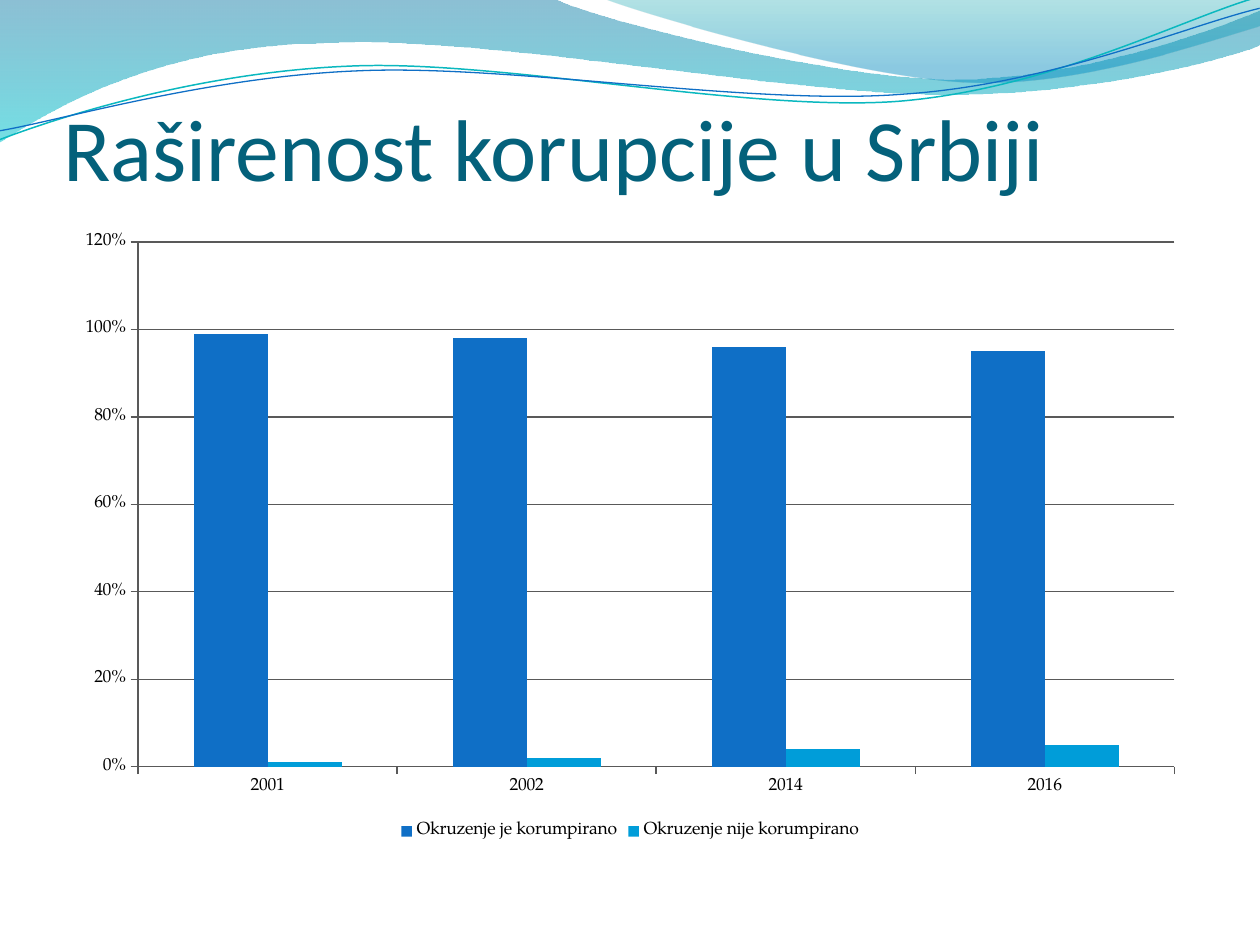
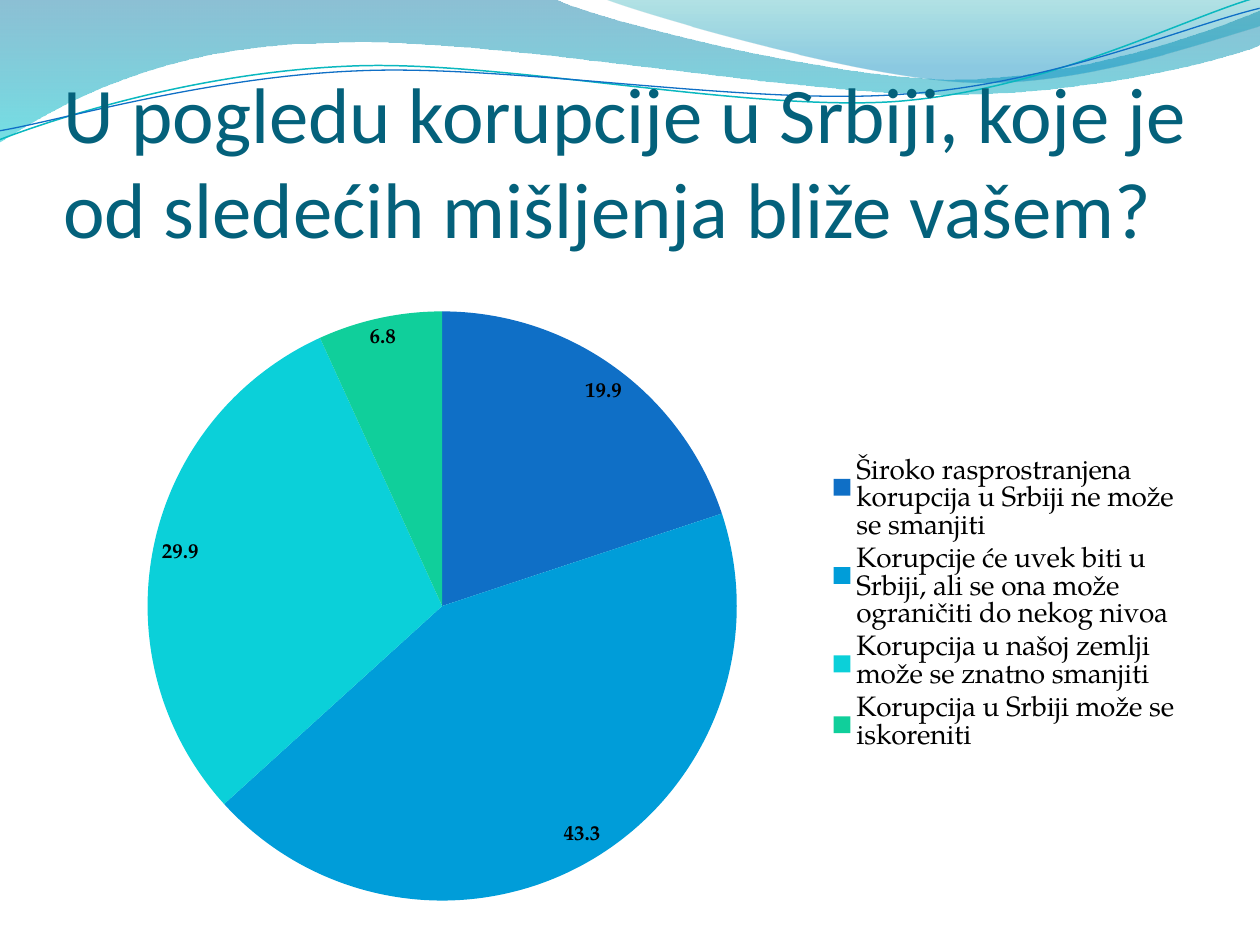
from lxml import etree
from pptx import Presentation
from pptx.chart.data import CategoryChartData
from pptx.dml.color import RGBColor
from pptx.enum.chart import XL_CHART_TYPE, XL_LABEL_POSITION, XL_LEGEND_POSITION, XL_TICK_MARK
from pptx.enum.text import MSO_ANCHOR, MSO_AUTO_SIZE, PP_ALIGN
from pptx.oxml.ns import qn
from pptx.util import Emu, Pt

BARS, PIE = XL_CHART_TYPE.COLUMN_CLUSTERED, XL_CHART_TYPE.PIE
BELOW, RIGHT = XL_LEGEND_POSITION.BOTTOM, XL_LEGEND_POSITION.RIGHT
BEST = XL_LABEL_POSITION.BEST_FIT
OUT, NONE = XL_TICK_MARK.OUTSIDE, XL_TICK_MARK.NONE
LEFT, BOTTOM, FIXED = PP_ALIGN.LEFT, MSO_ANCHOR.BOTTOM, MSO_AUTO_SIZE.NONE

PX = 914400 / 126
INK, GREY = "04617B", "595959"
TONES = ["0F6FC6", "009DD9", "0BD0D9", "10CF9B"]
rgb = RGBColor.from_string


def px(n):
    return Emu(round(n * PX))


def put(item, **vals):
    for name, val in vals.items():
        setattr(item, name, val)


deck = Presentation()
put(deck, slide_width=px(1260), slide_height=px(945))
base = deck.slide_layouts[5]
slides = [deck.slides.add_slide(base) for _ in range(2)]

waves = [
    {"grad": [("0074A1", 0, 45), ("00C6CF", 1, 55)],
     "start": (0, 0),
     "segs": [(554, -1), (600, 21, 837, 79, 955, 79),
              (1075, 79, 1207, 33, 1260, 11), (1261, 45),
              (1239, 55, 1096, 96, 940, 94), (784, 94, 481, 35, 324, 43),
              (163, 45, 58, 105, -1, 142)]},
    {"grad": [("00A1A9", 0, 30), ("008BBF", 0.8, 45)],
     "start": (604, -1),
     "segs": [(641, 14, 859, 78, 969, 82),
              (1079, 87, 1211, 40, 1260, 26), (1260, 0)]},
    {"line": ("0AB8BF", 0.85),
     "start": (-3, 110),
     "segs": [(58, 90, 199, 52, 350, 53), (499, 53, 745, 118, 896, 114),
              (1048, 109, 1184, 45, 1260, 27)]},
    {"line": ("0F6FC6", 0.75),
     "start": (-2, 101),
     "segs": [(57, 94, 207, 57, 357, 58), (509, 58, 750, 112, 902, 107),
              (1052, 104, 1188, 52, 1262, 38)]},
]
for rank, wave in enumerate(waves):
    pen = slides[0].shapes.build_freeform(*map(px, wave["start"]), scale=1)
    ends = [(px(seg[-2]), px(seg[-1])) for seg in wave["segs"]]
    pen.add_line_segments(ends, close="grad" in wave)
    shape = pen.convert_to_shape()
    shape.shadow.inherit = False
    lines = list(shape._element.iter(qn("a:lnTo")))
    for node, seg in zip(lines, wave["segs"]):
        if len(seg) == 6:
            curve = etree.Element(qn("a:cubicBezTo"))
            for x, y in zip(seg[::2], seg[1::2]):
                etree.SubElement(curve, qn("a:pt"), x=str(px(x) - shape.left),
                                 y=str(px(y) - shape.top))
            node.getparent().replace(node, curve)
    if "grad" in wave:
        shape.line.fill.background()
        shape.fill.gradient()
        shape.fill.gradient_angle = 270
        for stop, (tone, place, _) in zip(shape.fill.gradient_stops, wave["grad"]):
            stop.position = place
            stop.color.rgb = rgb(tone)
        for node, (_, _, alpha) in zip(shape._element.iter(qn("a:srgbClr")), wave["grad"]):
            etree.SubElement(node, qn("a:alpha")).set("val", str(alpha * 1000))
    else:
        tone, width = wave["line"]
        shape.rotation = 357.3
        shape.fill.background()
        shape.line.color.rgb = rgb(tone)
        shape.line.width = Pt(width)
    shape._element.nvSpPr.cNvPr.set("id", str(20 + rank))
    base.shapes._spTree.insert(2 + rank, shape._element)

pages = [
    {"title": "Raširenost korupcije u Srbiji", "size": 50, "top": 42,
     "kind": BARS, "box": (63, 221, 1134, 624), "key": BELOW, "point": 10,
     "cats": ["2001", "2002", "2014", "2016"],
     "rows": {"Okruzenje je korumpirano": [0.99, 0.98, 0.96, 0.95],
              "Okruzenje nije korumpirano": [0.01, 0.02, 0.04, 0.05]}},
    {"title": "U pogledu korupcije u Srbiji, koje je od sledećih mišljenja bliže vašem?",
     "size": 45, "top": 97,
     "kind": PIE, "box": (60, 294, 1134, 624), "key": RIGHT, "point": 16,
     "cats": ["Široko rasprostranjena korupcija u Srbiji ne može se smanjiti",
              "Korupcije će uvek biti u Srbiji, ali se ona može ograničiti do nekog nivoa",
              "Korupcija u našoj zemlji može se znatno smanjiti",
              "Korupcija u Srbiji može se iskoreniti"],
     "rows": {"Series 1": [19.9, 43.3, 29.9, 6.8]}},
]
for slide, page in zip(slides, pages):
    title = slide.shapes.title
    put(title, left=px(63), top=px(page["top"]), width=px(1134), height=px(157))
    frame = title.text_frame
    frame.text = page["title"]
    put(frame, margin_left=0, margin_right=0, margin_top=px(6), margin_bottom=0,
        vertical_anchor=BOTTOM, auto_size=FIXED, word_wrap=True)
    para = frame.paragraphs[0]
    para.alignment = LEFT
    font = para.runs[0].font
    put(font, name="Calibri", size=Pt(page["size"]))
    font.color.rgb = rgb(INK)

    data = CategoryChartData()
    data.categories = page["cats"]
    for name, vals in page["rows"].items():
        data.add_series(name, vals)
    box = [px(n) for n in page["box"]]
    chart = slide.shapes.add_chart(page["kind"], *box, data).chart
    put(chart, has_title=False, has_legend=True)
    put(chart.font, name="TeX Gyre Pagella", size=Pt(10))
    chart.font.color.rgb = rgb("000000")
    put(chart.legend, position=page["key"], include_in_layout=False)
    put(chart.legend.font, name="TeX Gyre Pagella", size=Pt(page["point"]))
    chart.legend.font.color.rgb = rgb("000000")
    plot = chart.plots[0]

    if page["kind"] == BARS:
        put(plot, gap_width=150, overlap=0, vary_by_categories=False)
        parts = plot.series
        scale = chart.value_axis
        put(scale, minimum_scale=0, maximum_scale=1.2, major_unit=0.2,
            has_major_gridlines=True)
        put(scale.tick_labels, number_format="0%", number_format_is_linked=False)
        for axis in (scale, chart.category_axis):
            put(axis, major_tick_mark=OUT, minor_tick_mark=NONE)
        for edge in (scale, chart.category_axis, scale.major_gridlines):
            edge.format.line.color.rgb = rgb(GREY)
            edge.format.line.width = Pt(0.75)
    else:
        plot.vary_by_categories = True
        parts = [plot.series[0].points[i] for i in range(len(page["cats"]))]
        tags = plot.series[0].data_labels
        put(tags, show_value=True, show_percentage=False, position=BEST,
            number_format="0.0", number_format_is_linked=False)
        put(tags.font, name="TeX Gyre Pagella", size=Pt(12), bold=True)
        tags.font.color.rgb = rgb("000000")
    for part, tone in zip(parts, TONES):
        part.format.fill.solid()
        part.format.fill.fore_color.rgb = rgb(tone)

deck.save("out.pptx")
